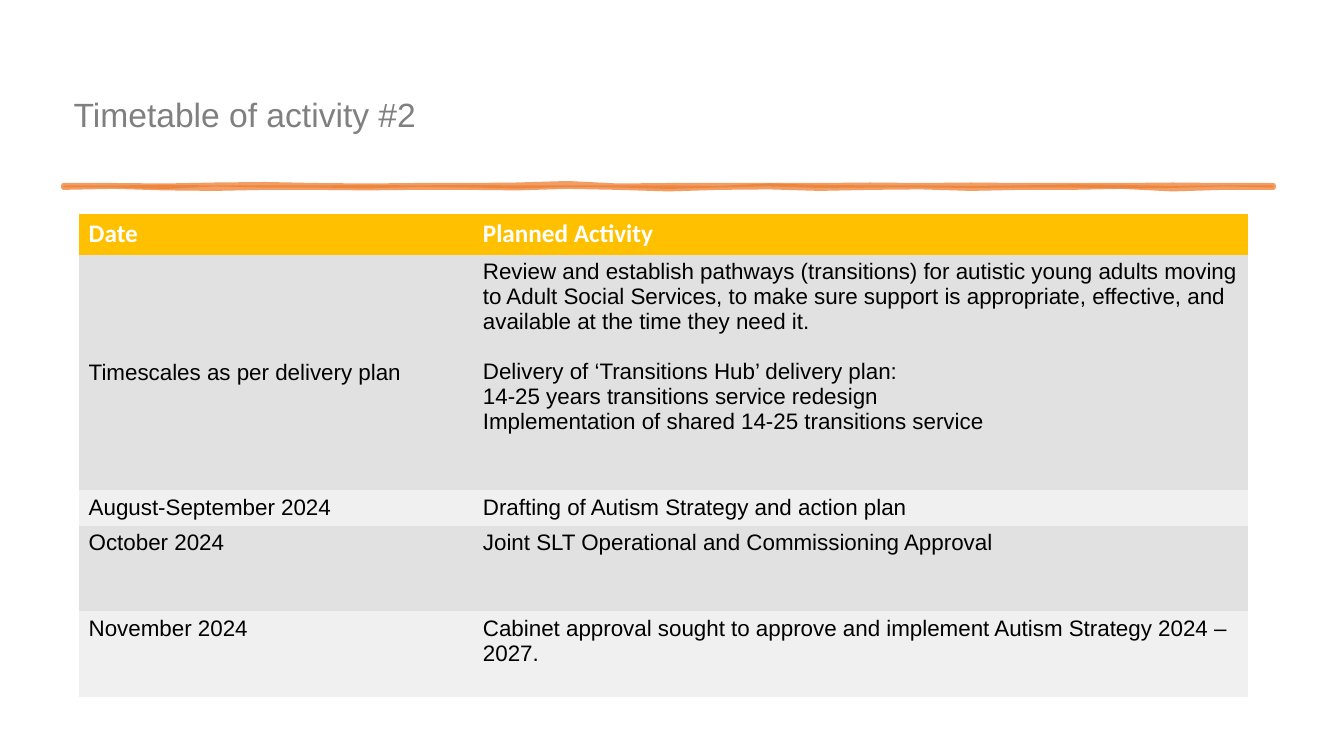
from pptx import Presentation, util as u
from pptx.dml.color import RGBColor
from pptx.enum import text
from pptx.oxml import ns
from lxml import etree

WIDE, HIGH = 13.33, 7.5
INK = {"title": "808080", "brush": "ED7D31", "head": "FFC000",
       "odd": "E1E1E1", "even": "F0F0F0", "text": "000000", "white": "FFFFFF"}
COLS = [3.91, 7.69]
ROWS = [0.4, 2.34, 0.35, 0.85, 0.85]
PLAN = [
    ("Date", "Planned Activity"),
    ("Timescales as per delivery plan",
     "Review and establish pathways (transitions) for autistic young adults moving "
     "to Adult Social Services, to make sure support is appropriate, effective, and "
     "available at the time they need it.\n"
     "Delivery of ‘Transitions Hub’ delivery plan:\n"
     "14-25 years transitions service redesign\n"
     "Implementation of shared 14-25 transitions service"),
    ("August-September 2024", "Drafting of Autism Strategy and action plan"),
    ("October 2024", "Joint SLT Operational and Commissioning Approval"),
    ("November 2024",
     "Cabinet approval sought to approve and implement Autism Strategy 2024 – 2027."),
]
EDGE = [0, 0, 0.5, -0.5, -1, 0, 0.5, 0, 0, -0.5, -2, 0.5, 0,
        0, 0, 0, -0.5, 0, -0.5, 0, 0, 0, -0.5, 0, 0]
BASE = [2, 1, 2.5, 3, 2, 2, 2.5, 2, 2, 2.5, 1, 2, 3.5,
        2, 1.5, 3, 2, 1.5, 3, 2, 2, 1, 3.5, 2, 2]


def tint(color, name):
    color.rgb = RGBColor.from_string(INK[name])


def style(para, name, size, ink, bold=False):
    para.font.name, para.font.size, para.font.bold = name, u.Pt(size), bold
    tint(para.font.color, ink)


def place(shape, box):
    shape.left, shape.top, shape.width, shape.height = map(u.Inches, box)


def title(slide, box, words):
    shape = slide.shapes.title
    place(shape, box)
    frame = shape.text_frame
    frame.text = words
    frame.vertical_anchor = text.MSO_ANCHOR.BOTTOM
    para = frame.paragraphs[0]
    para.alignment, para.line_spacing = text.PP_ALIGN.LEFT, 0.9
    style(para, "Arial", 24, "title")


def fade(fill):
    color = fill._xPr.find(".//" + ns.qn("a:srgbClr"))
    etree.SubElement(color, ns.qn("a:alpha"), val="75000")


def stroke(slide, box, edge, base):
    left, top, width, unit = box
    step = width / (len(edge) - 1)
    upper = [(left + i * step, top + dy * unit) for i, dy in enumerate(edge)]
    lower = [(left + i * step, top + dy * unit) for i, dy in enumerate(base)]
    points = [(u.Inches(x), u.Inches(y)) for x, y in upper + lower[::-1]]
    pen = slide.shapes.build_freeform(*points[0])
    pen.add_line_segments(points[1:])
    shape = pen.convert_to_shape()
    shape.shadow.inherit = False
    return shape


def brush(slide, box):
    body = stroke(slide, box, EDGE[::-1], BASE[::-1])
    body.fill.solid()
    tint(body.fill.fore_color, "brush")
    fade(body.fill)
    body.line.fill.background()
    rim = stroke(slide, box, EDGE, BASE)
    rim.fill.background()
    rim.line.width = u.Pt(3.5)
    tint(rim.line.color, "brush")
    fade(rim.line.fill)
    etree.SubElement(rim.line.fill._xPr, ns.qn("a:round"))


def table(slide, box):
    frame = slide.shapes.add_table(len(ROWS), len(COLS), *map(u.Inches, box))
    grid = frame.table
    look = grid._tbl.tblPr.find(ns.qn("a:tableStyleId"))
    look.text = "{2D5ABB26-0587-4C30-8999-92F81FD0307C}"
    for col, width in zip(grid.columns, COLS):
        col.width = u.Inches(width)
    for r, (row, height) in enumerate(zip(grid.rows, ROWS)):
        row.height = u.Inches(height)
        for cell, words in zip(row.cells, PLAN[r]):
            cell.text = words
            cell.fill.solid()
            tint(cell.fill.fore_color, "head" if r == 0 else "odd" if r % 2 else "even")
            for para in cell.text_frame.paragraphs:
                if r == 0:
                    style(para, "Calibri", 18, "white", True)
                else:
                    style(para, "Arial", 16, "text")
    grid.cell(1, 0).vertical_anchor = text.MSO_ANCHOR.MIDDLE
    grid.cell(1, 1).text_frame.paragraphs[1].space_before = u.Pt(18)


def main():
    deck = Presentation()
    deck.slide_width, deck.slide_height = u.Inches(WIDE), u.Inches(HIGH)
    slide = deck.slides.add_slide(deck.slide_layouts[5])
    title(slide, (0.63, 0.73, 12.05, 0.66), "Timetable of activity #2")
    brush(slide, (0.63, 1.84, 12, 0.01))
    table(slide, (0.78, 2.12, sum(COLS), sum(ROWS)))
    deck.save("out.pptx")


if __name__ == "__main__":
    main()
